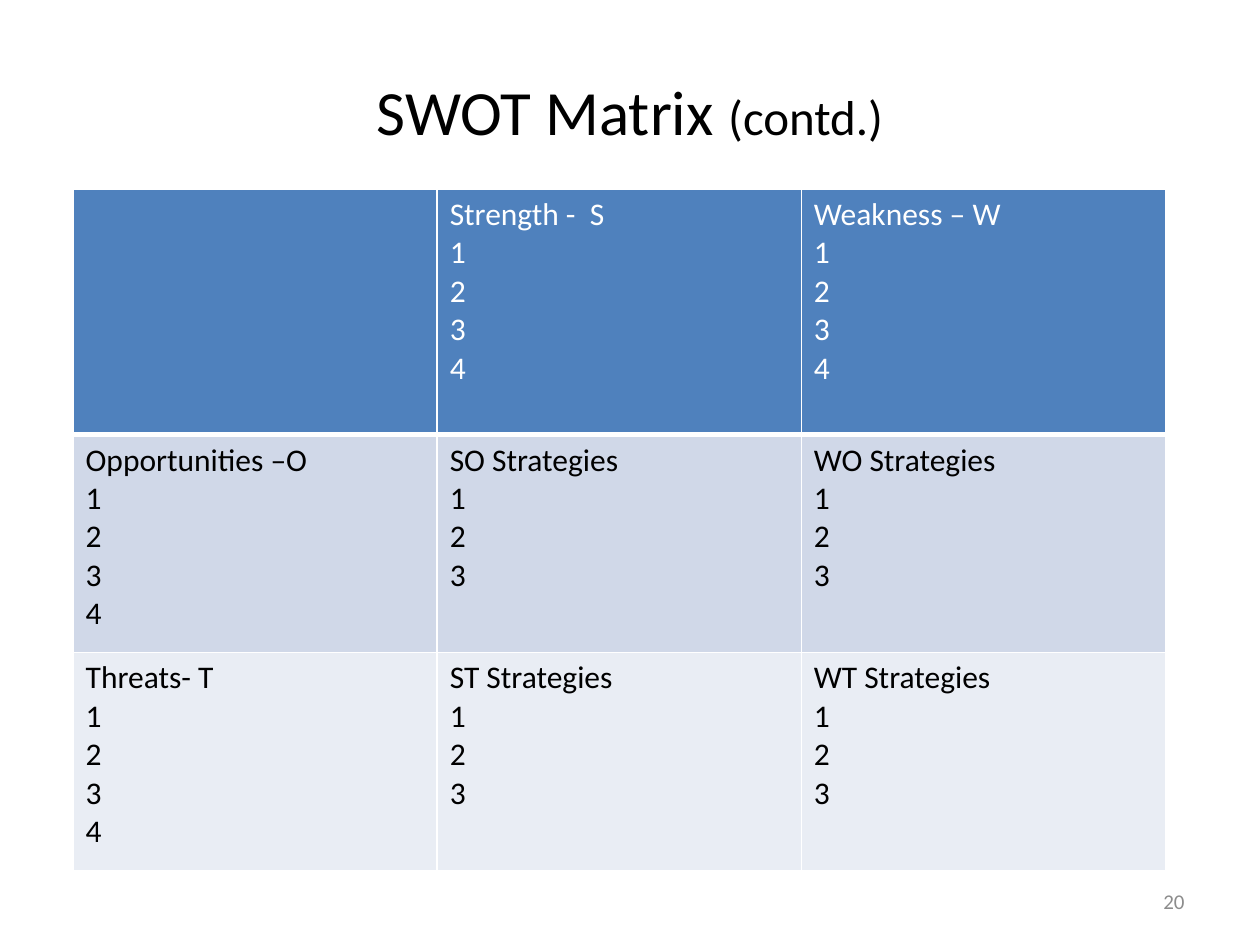
from lxml.etree import SubElement
from pptx import Presentation
from pptx.dml.color import RGBColor
from pptx.enum.text import MSO_ANCHOR, PP_ALIGN
from pptx.oxml.ns import qn
from pptx.util import Inches, Pt

COLORS = {
    "text": "000000",
    "white": "FFFFFF",
    "header": "4F81BD",
    "opportunities": "D0D8E8",
    "threats": "E9EDF4",
    "number": "8C8C8C",
}
ROWS = [
    ("header", 1.95, [("", 0), ("Strength -  S", 4), ("Weakness – W", 4)]),
    ("opportunities", 1.73, [("Opportunities –O", 4), ("SO Strategies", 3), ("WO Strategies", 3)]),
    ("threats", 1.73, [("Threats- T", 4), ("ST Strategies", 3), ("WT Strategies", 3)]),
]
COLUMN_WIDTH = 2.89


def rgb(name):
    return RGBColor.from_string(COLORS[name])


def format_run(run, size, color):
    run.font.name = "Calibri"
    run.font.size = Pt(size)
    run.font.bold = False
    run.font.color.rgb = rgb(color)


def place(shape, left, top, width, height):
    shape.left, shape.top = Inches(left), Inches(top)
    shape.width, shape.height = Inches(width), Inches(height)


def add_title(slide):
    title = slide.shapes.title
    place(title, 0.5, 0.25, 9, 1.25)
    title.text_frame.vertical_anchor = MSO_ANCHOR.MIDDLE
    heading = title.text_frame.paragraphs[0]
    heading.alignment = PP_ALIGN.CENTER
    for words, size in (("SWOT Matrix ", 36), ("(contd.)", 28)):
        run = heading.add_run()
        run.text = words
        format_run(run, size, "text")


def set_borders(cell, bottom_width):
    properties = cell._tc.get_or_add_tcPr()
    for side, width in (("L", 1), ("R", 1), ("T", 1), ("B", bottom_width)):
        border = SubElement(properties, qn(f"a:ln{side}"), w=str(Pt(width)))
        fill = SubElement(border, qn("a:solidFill"))
        SubElement(fill, qn("a:srgbClr"), val=COLORS["white"])


def fill_cell(cell, label, count, band):
    is_header = band == "header"
    set_borders(cell, 3 if is_header else 1)
    cell.fill.solid()
    cell.fill.fore_color.rgb = rgb(band)
    cell.text_frame.text = "\n".join([label, *map(str, range(1, count + 1))])
    for paragraph in cell.text_frame.paragraphs:
        for run in paragraph.runs:
            format_run(run, 18, "white" if is_header else "text")


def add_matrix(slide):
    height = sum(row_height for _, row_height, _ in ROWS)
    matrix = slide.shapes.add_table(
        3, 3, Inches(0.58), Inches(1.5), Inches(3 * COLUMN_WIDTH), Inches(height)
    ).table
    for column in matrix.columns:
        column.width = Inches(COLUMN_WIDTH)
    for row, (band, row_height, entries) in zip(matrix.rows, ROWS):
        row.height = Inches(row_height)
        for cell, (label, count) in zip(row.cells, entries):
            fill_cell(cell, label, count, band)


def add_page_number(slide):
    page_number = slide.shapes.add_textbox(Inches(7.17), Inches(6.95), Inches(2.33), Inches(0.4))
    frame = page_number.text_frame
    frame.word_wrap = True
    frame.vertical_anchor = MSO_ANCHOR.MIDDLE
    frame.text = "20"
    frame.paragraphs[0].alignment = PP_ALIGN.RIGHT
    format_run(frame.paragraphs[0].runs[0], 12, "number")


def main():
    deck = Presentation()
    deck.slide_width, deck.slide_height = Inches(10), Inches(7.5)
    slide = deck.slides.add_slide(deck.slide_layouts[5])
    add_title(slide)
    add_matrix(slide)
    add_page_number(slide)
    deck.save("out.pptx")


if __name__ == "__main__":
    main()
